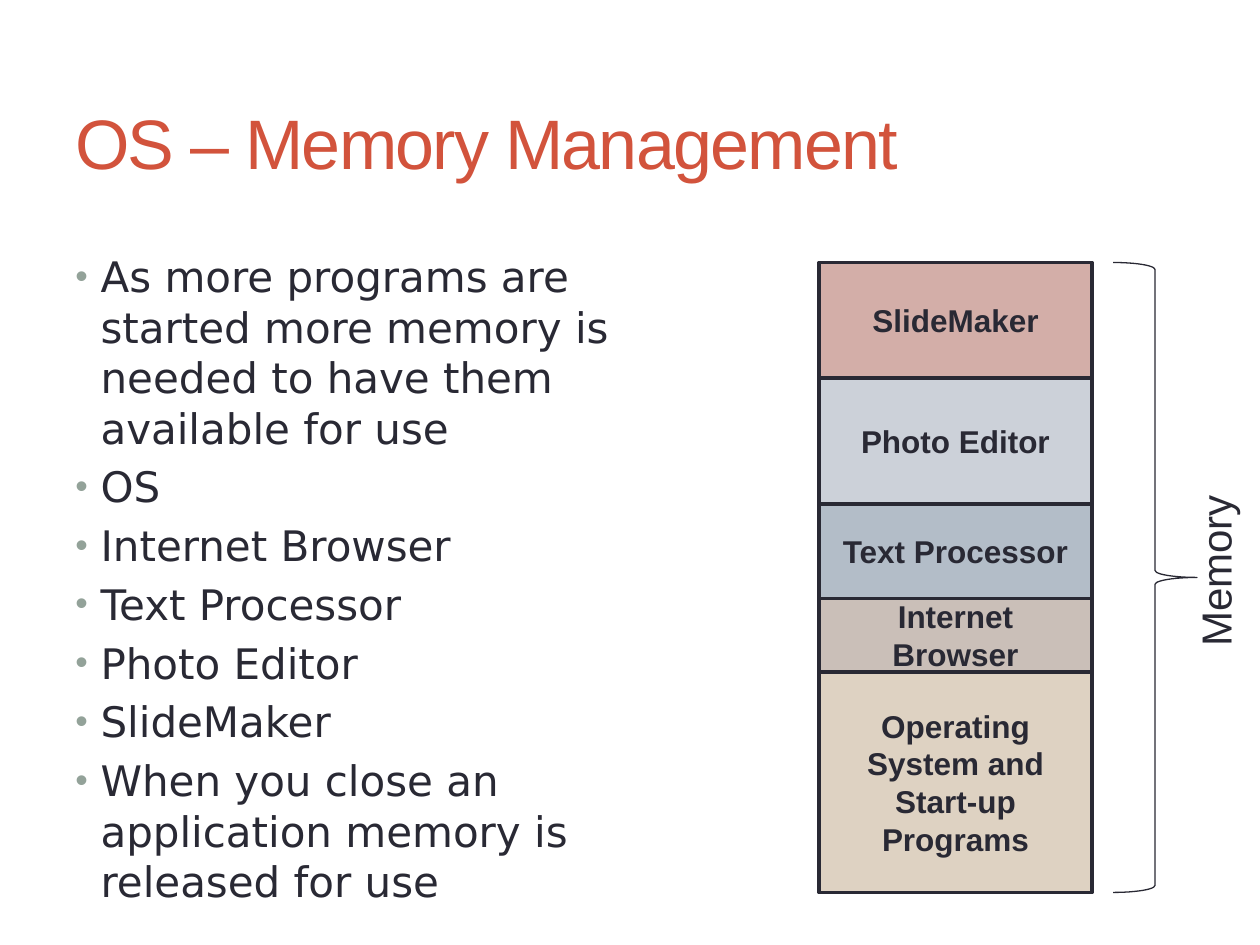
from lxml.etree import SubElement
from pptx import Presentation
from pptx.dml.color import RGBColor
from pptx.enum.shapes import MSO_SHAPE as Shape
from pptx.enum.text import MSO_ANCHOR as Anchor, MSO_AUTO_SIZE as AutoSize, PP_ALIGN as Align
from pptx.oxml.ns import qn
from pptx.util import Inches, Pt

INK = "292934"
CELL = Inches(1) // 12  # the slide is a grid of 120 columns by 90 rows


def grid(*cells):
    return [round(cell * CELL) for cell in cells]


def write(shape, *lines, size=18, font="Arial", color=INK, bold=False, align=Align.LEFT,
          anchor=Anchor.TOP, wrap=True, spacing=None, bullet=None):
    """Fill the shape with one paragraph per line; spacing is in points, bullet a hex colour."""
    frame = shape.text_frame
    frame.word_wrap = wrap
    frame.vertical_anchor = anchor
    frame.text = "\n".join(lines)
    for paragraph in frame.paragraphs:
        paragraph.alignment = align
        run = paragraph.runs[0]
        run.font.size, run.font.name, run.font.bold = Pt(size), font, bold
        run.font.color.rgb = RGBColor.from_string(color)
        if spacing is not None:
            run.font._element.set("spc", str(spacing * 100))
        if bullet:
            paragraph.space_before = Pt(size * 0.2)
            properties = paragraph._p.get_or_add_pPr()
            properties.set("marL", str(Inches(0.2)))
            properties.set("indent", str(-Inches(0.2)))
            bullet_color = SubElement(properties, qn("a:buClr"))
            SubElement(bullet_color, qn("a:srgbClr"), val=bullet)
            SubElement(properties, qn("a:buSzPct"), val="85000")
            SubElement(properties, qn("a:buFont"), typeface="Arial")
            SubElement(properties, qn("a:buChar"), char="•")


presentation = Presentation()
presentation.slide_width, presentation.slide_height = grid(120, 90)
slide = presentation.slides.add_slide(presentation.slide_layouts[6])
shapes = slide.shapes

title = shapes.add_textbox(*grid(6, 7, 108, 13))
write(title, "OS – Memory Management", size=40, color="D2533C", anchor=Anchor.MIDDLE, spacing=-1)

body = shapes.add_textbox(*grid(6, 23.3, 57, 60.7))
write(
    body,
    "As more programs are started more memory is needed to have them available for use",
    "OS",
    "Internet Browser",
    "Text Processor",
    "Photo Editor",
    "SlideMaker",
    "When you close an application memory is released for use",
    size=24, font="DejaVu Sans", bullet="93A299",
)

# Memory blocks stacked from the top: label, rows, fill
blocks = [
    ("SlideMaker", 11, "D3AEA8"),
    ("Photo Editor", 12, "CCD1D9"),
    ("Text Processor", 9, "B3BDC8"),
    ("Internet Browser", 7, "CABFB8"),
    ("Operating System and Start-up Programs", 21, "DED2C2"),
]
stack_top = 25
top = stack_top
for label, rows, fill in blocks:
    block = shapes.add_shape(Shape.RECTANGLE, *grid(78, top, 26, rows))
    block.shadow.inherit = False
    block.fill.solid()
    block.fill.fore_color.rgb = RGBColor.from_string(fill)
    block.line.color.rgb = RGBColor.from_string(INK)
    block.line.width = Pt(2.08)
    write(block, label, bold=True, align=Align.CENTER, anchor=Anchor.MIDDLE)
    top += rows

brace = shapes.add_shape(Shape.RIGHT_BRACE, *grid(106, stack_top, 8, top - stack_top))
brace.shadow.inherit = False
brace.fill.background()
brace.line.color.rgb = RGBColor.from_string(INK)
brace.line.width = Pt(0.75)

memory = shapes.add_textbox(*grid(112.7, 47, 7.3, 15.8))
write(memory, "Memory", size=24, wrap=False)
memory.text_frame.auto_size = AutoSize.SHAPE_TO_FIT_TEXT
memory.text_frame._txBody.bodyPr.set("vert", "vert270")

presentation.save("out.pptx")
